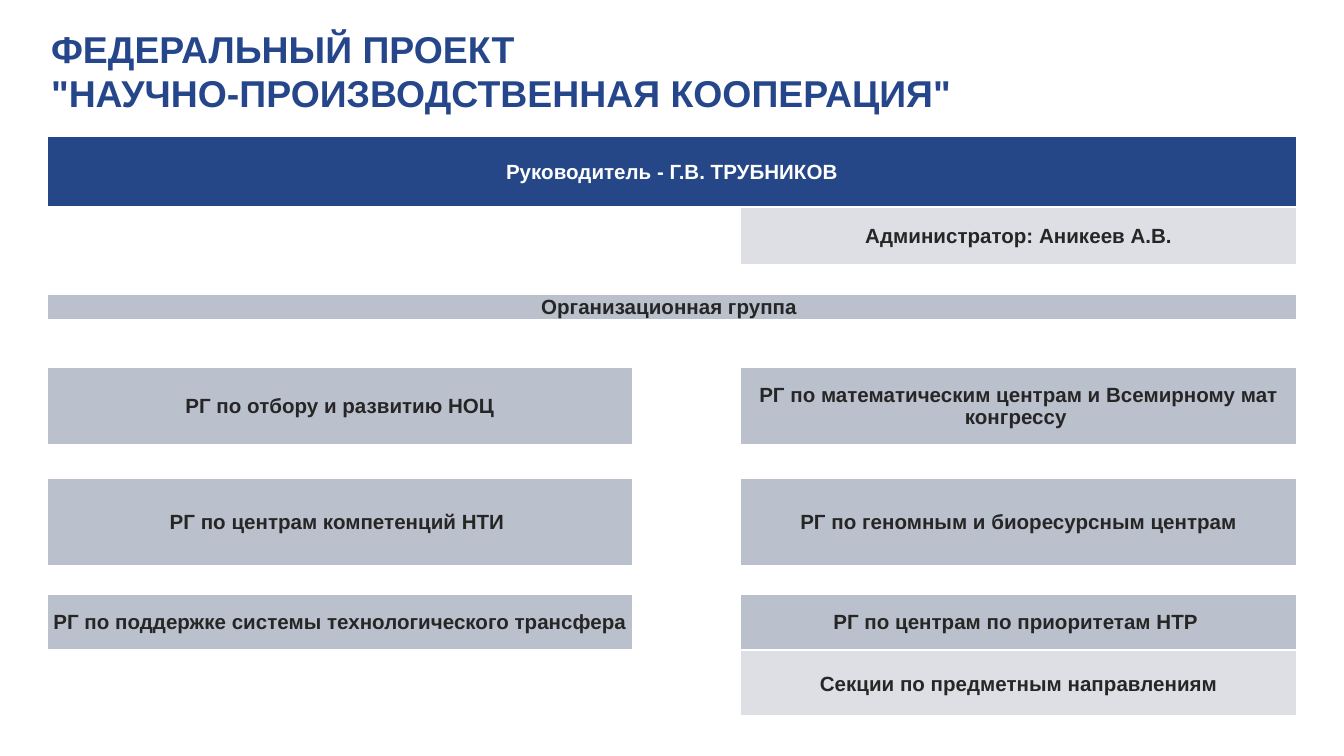
"""Build the project management structure slide."""
from lxml import etree
from pptx import Presentation
from pptx import util as u
from pptx.dml.color import RGBColor
from pptx.enum import text
from pptx.oxml.ns import qn

HUES = {"title": "25468A", "head": "254787", "group": "BAC0CC",
        "sub": "DDDFE5", "ink": "262626", "white": "FFFFFF"}
COLS = [1.96, 2.4, 0.8, 1.88, 2.26]
ROWS = [0.53, 0.43, 0.22, 0.19, 0.35, 0.58, 0.25, 0.65, 0.21, 0.42, 0.49]
CELLS = [
    (0, 0, 4, "head", "Руководитель - Г.В. ТРУБНИКОВ"),
    (1, 3, 4, "sub", "Администратор: Аникеев А.В."),
    (3, 0, 4, "group", "Организационная группа "),
    (4, 0, 4, None, ""),
    (5, 0, 1, "group", "РГ по отбору и развитию НОЦ"),
    (5, 3, 4, "group", "РГ по математическим центрам и Всемирному мат конгрессу "),
    (7, 0, 1, "group", "РГ по центрам компетенций НТИ "),
    (7, 3, 4, "group", "РГ по геномным и биоресурсным центрам"),
    (9, 0, 1, "group", "РГ по поддержке системы технологического трансфера"),
    (9, 3, 4, "group", "РГ по центрам по приоритетам НТР "),
    (10, 3, 4, "sub", "Секции по предметным направлениям"),
]


def style(par, size, hue):
    par.font.name = "Arial"
    par.font.size = u.Pt(size)
    par.font.bold = True
    par.font.color.rgb = RGBColor.from_string(HUES[hue])


def edge(cell):
    props = cell._tc.get_or_add_tcPr()
    for i, side in enumerate(("lnL", "lnR", "lnT", "lnB")):
        line = etree.Element(qn("a:" + side), w=str(u.Pt(1)))
        fill = etree.SubElement(line, qn("a:solidFill"))
        etree.SubElement(fill, qn("a:srgbClr"), val=HUES["white"])
        props.insert(i, line)


deck = Presentation()
deck.slide_width, deck.slide_height = u.Inches(10), u.Inches(10 * 9 / 16)
slide = deck.slides.add_slide(deck.slide_layouts[5])

title = slide.shapes.title
title.left, title.top = u.Inches(0.28), u.Inches(0.21)
title.width, title.height = u.Inches(9.29), u.Inches(0.63)
frame = title.text_frame
frame.text = 'ФЕДЕРАЛЬНЫЙ ПРОЕКТ\n"НАУЧНО-ПРОИЗВОДСТВЕННАЯ КООПЕРАЦИЯ"'
frame.auto_size = text.MSO_AUTO_SIZE.NONE
frame.vertical_anchor = text.MSO_ANCHOR.MIDDLE
for par in frame.paragraphs:
    par.alignment = text.PP_ALIGN.LEFT
    style(par, 20, "title")

table = slide.shapes.add_table(
    len(ROWS), len(COLS), u.Inches(0.35), u.Inches(1.01),
    u.Inches(sum(COLS)), u.Inches(sum(ROWS))).table
table.first_row = table.horz_banding = False
for col, width in zip(table.columns, COLS):
    col.width = u.Inches(width)
for row, height in zip(table.rows, ROWS):
    row.height = u.Inches(height)

for cell in table.iter_cells():
    cell.margin_left = cell.margin_right = cell.margin_top = u.Inches(0.01)
    cell.margin_bottom = 0
    cell.vertical_anchor = text.MSO_ANCHOR.MIDDLE
    cell.fill.background()
    edge(cell)

for row, first, last, hue, label in CELLS:
    cell = table.cell(row, first)
    cell.merge(table.cell(row, last))
    if hue:
        cell.fill.solid()
        cell.fill.fore_color.rgb = RGBColor.from_string(HUES[hue])
        cell.text = label
        par = cell.text_frame.paragraphs[0]
        par.alignment = text.PP_ALIGN.CENTER
        style(par, 11, "white" if hue == "head" else "ink")

for cell in table.iter_cells():
    if not cell.text:
        par = cell.text_frame.paragraphs[0]
        etree.SubElement(par._p, qn("a:endParaRPr"), sz="800")

deck.save("out.pptx")
